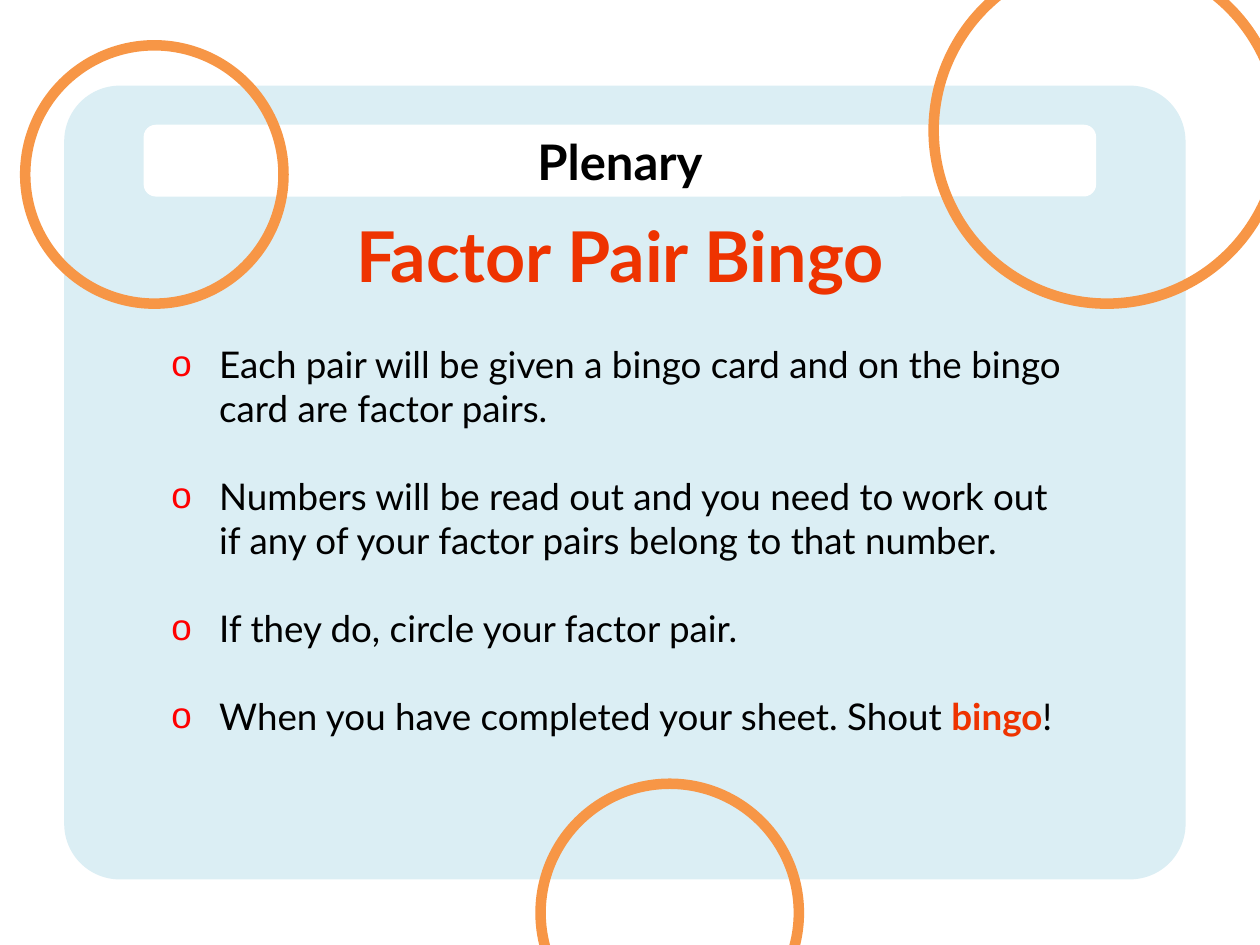
from typing import NamedTuple

import pptx
import pptx.dml.color
import pptx.enum.shapes
import pptx.enum.text
import pptx.oxml
import pptx.oxml.ns
import pptx.util

Inches = pptx.util.Inches
Pt = pptx.util.Pt
SHAPES = pptx.enum.shapes.MSO_SHAPE
ANCHOR = pptx.enum.text.MSO_ANCHOR
CENTER = pptx.enum.text.PP_ALIGN.CENTER

BLACK, RED, ORANGE = "000000", "EE3300", "F79646"
BODY_SIZE = 21
LINE_HEIGHT = 1.2


class Panel(NamedTuple):
    left: float
    top: float
    width: float
    height: float
    corner: float
    fill: str


class Ring(NamedTuple):
    left: float
    top: float
    diameter: float


RINGS = [Ring(0.2, 0.36, 2.05), Ring(4.29, 6.22, 2.05), Ring(7.41, -0.34, 2.75)]

INSTRUCTIONS = [
    [("Each pair will be given a bingo card and on the bingo card are factor pairs.", False)],
    [("Numbers will be read out and you need to work out if any of your factor pairs belong to that number.", False)],
    [("If they do, circle your factor pair.", False)],
    [("When you have completed your sheet. Shout ", False), ("bingo", True), ("!", False)],
]


def rgb(value: str):
    return pptx.dml.color.RGBColor.from_string(value)


def add_text(paragraph, text: str, *, size: float, color: str = BLACK, bold: bool = False):
    run = paragraph.add_run()
    run.text = text
    run.font.name = "Lato"
    run.font.size = Pt(size)
    run.font.bold = bold
    run.font.color.rgb = rgb(color)


def add_panel(slide, panel: Panel):
    shape = slide.shapes.add_shape(
        SHAPES.ROUNDED_RECTANGLE, *map(Inches, panel[:4]))
    shape.adjustments[0] = panel.corner
    shape.fill.solid()
    shape.fill.fore_color.rgb = rgb(panel.fill)
    shape.line.fill.background()
    shape.shadow.inherit = False
    return shape


def add_ring(slide, ring: Ring):
    shape = slide.shapes.add_shape(
        SHAPES.OVAL, Inches(ring.left), Inches(ring.top),
        Inches(ring.diameter), Inches(ring.diameter))
    shape.fill.background()
    shape.line.color.rgb = rgb(ORANGE)
    shape.line.width = Pt(6)
    shape.shadow.inherit = False


def place_on_top(placeholder, top: float, height: float):
    placeholder.left, placeholder.top = Inches(1.26), Inches(top)
    placeholder.width, placeholder.height = Inches(7.32), Inches(height)
    frame = placeholder.text_frame
    frame.word_wrap = True
    frame.auto_size = pptx.enum.text.MSO_AUTO_SIZE.NONE
    frame.vertical_anchor = ANCHOR.TOP
    placeholder.element.getparent().append(placeholder.element)
    return frame


def add_bullet(paragraph):
    properties = paragraph._p.get_or_add_pPr()
    properties.set("marL", str(Inches(0.38)))
    properties.set("indent", str(-Inches(0.38)))
    namespace = pptx.oxml.ns.nsdecls("a")
    for xml in (
        f'<a:buClr {namespace}><a:srgbClr val="FF0000"/></a:buClr>',
        f'<a:buChar {namespace} char="o"/>',
    ):
        properties.append(pptx.oxml.parse_xml(xml))


def fill_instructions(frame):
    for index, instruction in enumerate(INSTRUCTIONS):
        paragraph = frame.add_paragraph() if index else frame.paragraphs[0]
        add_bullet(paragraph)
        paragraph.space_before = Pt(BODY_SIZE * LINE_HEIGHT if index else 0)
        for text, emphasised in instruction:
            add_text(paragraph, text, size=BODY_SIZE,
                     color=RED if emphasised else BLACK, bold=emphasised)


def main():
    presentation = pptx.Presentation()
    presentation.slide_width, presentation.slide_height = Inches(10), Inches(7.5)
    slide = presentation.slides.add_slide(presentation.slide_layouts[1])

    add_panel(slide, Panel(0.51, 0.68, 8.9, 6.3, 0.07, "DBEEF4"))
    plenary = add_panel(slide, Panel(1.14, 0.99, 7.56, 0.57, 0.17, "FFFFFF")).text_frame
    plenary.vertical_anchor = ANCHOR.MIDDLE
    plenary.paragraphs[0].alignment = CENTER
    add_text(plenary.paragraphs[0], "Plenary", size=28, bold=True)

    game_title = place_on_top(slide.shapes.title, 1.64, 0.77).paragraphs[0]
    game_title.alignment = CENTER
    add_text(game_title, "Factor Pair Bingo", size=40, color=RED, bold=True)

    fill_instructions(place_on_top(slide.placeholders[1], 2.66, 3.7))

    for ring in RINGS:
        add_ring(slide, ring)
    presentation.save("out.pptx")


if __name__ == "__main__":
    main()
